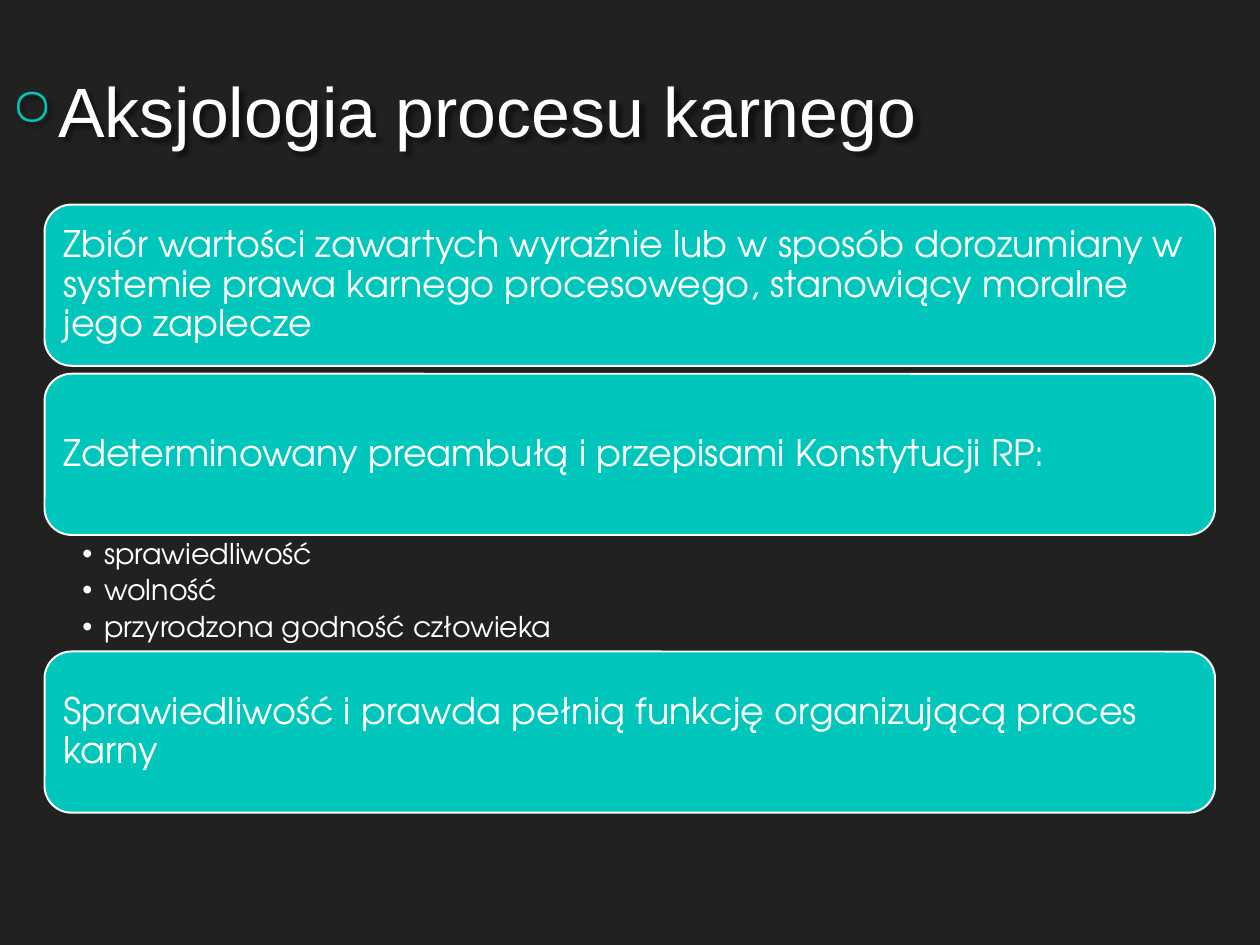
from pptx import Presentation
from pptx.dml.color import RGBColor
from pptx.enum.shapes import MSO_SHAPE
from pptx.enum.text import MSO_ANCHOR, MSO_AUTO_SIZE, PP_ALIGN
from pptx.oxml import parse_xml
from pptx.oxml.ns import nsdecls
from pptx.util import Cm, Inches, Pt

HUES = {"back": "212121", "teal": "00C6BB", "white": "FFFFFF", "shade": "000000"}
FONT = "TeX Gyre Adventor"
SPACE = nsdecls("a")


def hue(name):
    """Return the named colour."""
    return RGBColor.from_string(HUES[name])


def write(shape, lines, size=23, font=FONT, anchor=MSO_ANCHOR.MIDDLE,
          pads=(0.1, 0.1, 0.1, 0.1), space=0.9, before=0, after=8,
          mark=None, tint="white", scale=100, indent=0):
    """Fill a shape with one formatted paragraph per line."""
    frame = shape.text_frame
    frame.word_wrap = True
    frame.auto_size = MSO_AUTO_SIZE.NONE
    frame.vertical_anchor = anchor
    (frame.margin_left, frame.margin_top,
     frame.margin_right, frame.margin_bottom) = map(Inches, pads)
    frame.text = "\n".join(lines)
    for para in frame.paragraphs:
        para.alignment = PP_ALIGN.LEFT
        para.line_spacing = space
        para.space_before, para.space_after = Pt(before), Pt(after)
        face = para.runs[0].font
        face.size, face.name = Pt(size), font
        face.color.rgb = hue("white")
        if mark:
            props = para._p.get_or_add_pPr()
            props.set("marL", str(Inches(indent)))
            props.set("indent", str(-Inches(indent)))
            for part in (
                    f'<a:buClr {SPACE}><a:srgbClr val="{HUES[tint]}"/></a:buClr>',
                    f'<a:buSzPct {SPACE} val="{scale * 1000}"/>',
                    f'<a:buChar {SPACE} char="{mark}"/>'):
                props.append(parse_xml(part))


deck = Presentation()
deck.slide_width, deck.slide_height = Cm(28), Cm(21)
slide = deck.slides.add_slide(deck.slide_layouts[1])
slide.background.fill.solid()
slide.background.fill.fore_color.rgb = hue("back")

title, body = slide.placeholders
title.left, title.top = Inches(0), Inches(0.2)
title.width, title.height = Inches(8.35), Inches(1.52)
write(title, ["Aksjologia procesu karnego"], size=44, font="Arial",
      pads=(0.1, 0.05, 0.1, 0.05), space=1.0, before=8.8, after=6.6,
      mark="○", tint="teal", scale=75, indent=0.41)
title._element.spPr.append(parse_xml(
    f'<a:effectLst {SPACE}><a:outerShdw blurRad="38100" dist="38100" '
    f'dir="2700000"><a:srgbClr val="{HUES["shade"]}"><a:alpha val="50000"/>'
    '</a:srgbClr></a:outerShdw></a:effectLst>'))

# Cards and the list share one column; the list sits below the second card.
left, first, width, high, gap, room = 0.39, 1.79, 10.24, 1.41, 0.07, 1.02
cards = [
    ("Zbiór wartości zawartych wyraźnie lub w sposób dorozumiany w systemie "
     "prawa karnego procesowego, stanowiący moralne jego zaplecze", gap),
    ("Zdeterminowany preambułą i przepisami Konstytucji RP:", room),
    ("Sprawiedliwość i prawda pełnią funkcję organizującą proces karny", 0),
]
top = first
for text, below in cards:
    card = slide.shapes.add_shape(MSO_SHAPE.ROUNDED_RECTANGLE, Inches(left),
                                  Inches(top), Inches(width), Inches(high))
    card.shadow.inherit = False
    card.fill.solid()
    card.fill.fore_color.rgb = hue("teal")
    card.line.color.rgb = hue("white")
    card.line.width = Pt(1.25)
    write(card, [text])
    top += high + below

body.left, body.top = Inches(left), Inches(4.69)
body.width, body.height = Inches(width), Inches(room)
write(body, ["sprawiedliwość", "wolność", "przyrodzona godność człowieka"],
      size=18, anchor=MSO_ANCHOR.TOP, pads=(0.33, 0.03, 0.18, 0.03),
      after=3.6, mark="•", indent=0.19)

deck.save("out.pptx")
